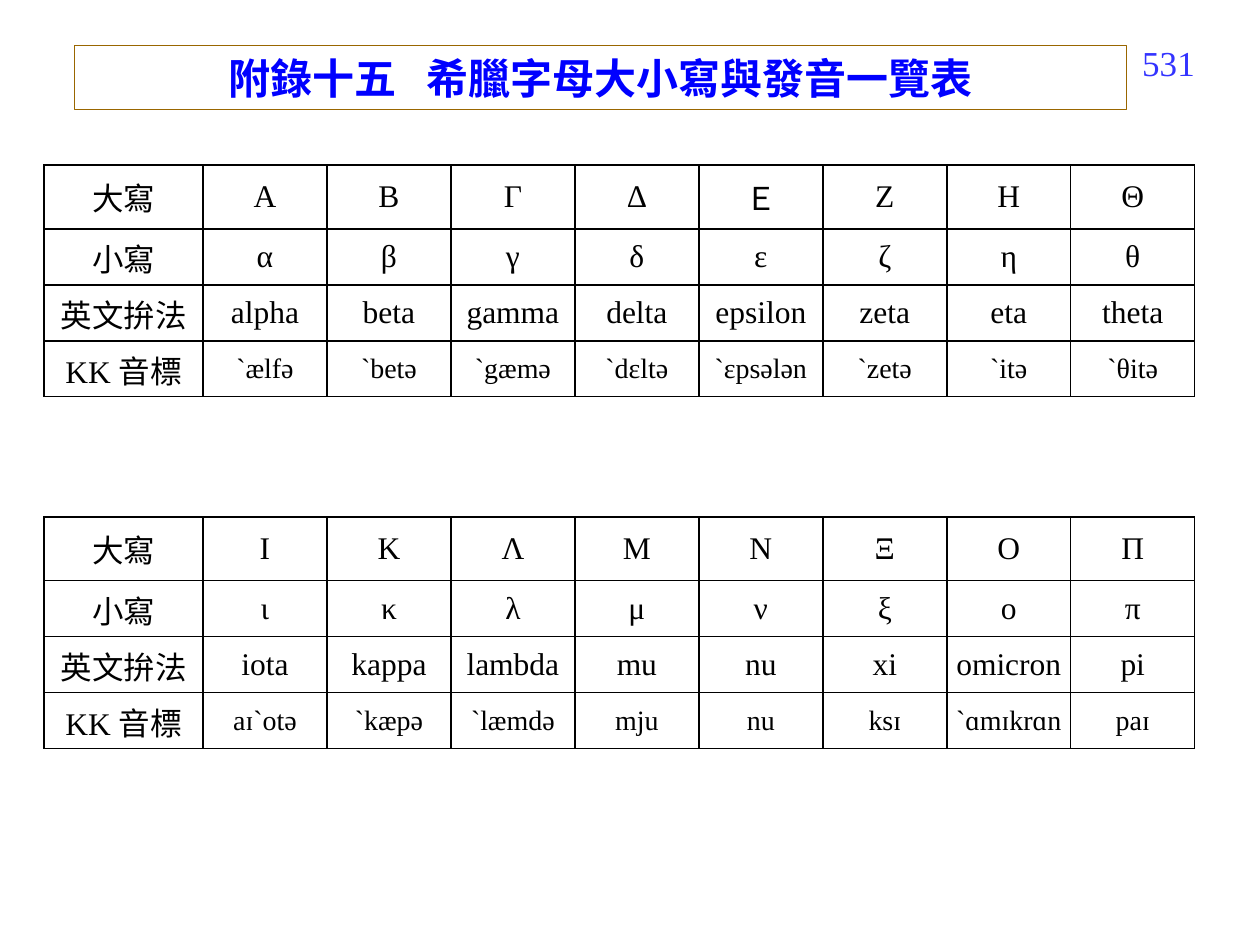
from dataclasses import dataclass

from lxml.etree import SubElement
from pptx import Presentation
from pptx.dml.color import RGBColor
from pptx.enum.shapes import MSO_SHAPE as Shape
from pptx.enum.text import MSO_ANCHOR as Anchor, PP_ALIGN as Align
from pptx.oxml.ns import qn
from pptx.util import Pt


@dataclass(frozen=True)
class Theme:
    font: str = "Times New Roman"
    title_color: str = "0000FF"
    frame_color: str = "996600"
    number_color: str = "3333FF"
    table_color: str = "000000"
    title_size: float = 24
    number_size: float = 20
    letter_size: float = 18
    phonetic_size: float = 16


@dataclass(frozen=True)
class LetterTable:
    top: float
    uppercase: str
    lowercase: str
    spellings: str
    phonetics: str

    def rows(self) -> list[list[str]]:
        columns = (self.uppercase, self.lowercase, self.spellings, self.phonetics)
        return [[label, *values.split()] for label, values in zip(ROW_LABELS, columns)]


THEME = Theme()
ROW_LABELS = ("大寫", "小寫", "英文拚法", "KK 音標")
TABLE_LEFT = 25.2
LABEL_WIDTH, LETTER_WIDTH = 90.8, 70.85
ROW_HEIGHTS = (36.5, 32, 32, 32)
TITLE_GAP = 12

TABLES = (
    LetterTable(
        94.3,
        "Α Β Γ Δ Ｅ Ζ Η Θ",
        "α β γ δ ε ζ η θ",
        "alpha beta gamma delta epsilon zeta eta theta",
        "ˋælfə ˋbetə ˋgæmə ˋdɛltə ˋɛpsələn ˋzetə ˋitə ˋθitə",
    ),
    LetterTable(
        295.3,
        "Ι Κ Λ Μ Ν Ξ Ο Π",
        "ι κ λ μ ν ξ ο π",
        "iota kappa lambda mu nu xi omicron pi",
        "aɪˋotə ˋkæpə ˋlæmdə mju nu ksɪ ˋɑmɪkrɑn paɪ",
    ),
)


def add_run(paragraph, text: str, size: float, color: str, bold: bool = False):
    run = paragraph.add_run()
    run.text = text
    run.font.name = THEME.font
    run.font.size = Pt(size)
    run.font.bold = bold
    run.font.color.rgb = RGBColor.from_string(color)
    return run


def add_page_number(slide, number: str) -> None:
    box = slide.shapes.add_textbox(Pt(626.4), Pt(20.2), Pt(63.4), Pt(37.4))
    box.text_frame.word_wrap = True
    paragraph = box.text_frame.paragraphs[0]
    paragraph.alignment = Align.RIGHT
    add_run(paragraph, number, THEME.number_size, THEME.number_color)


def add_title(slide, heading: str, subject: str) -> None:
    frame = slide.shapes.add_shape(Shape.RECTANGLE, Pt(42.5), Pt(26), Pt(601.2), Pt(36.7))
    frame.shadow.inherit = False
    frame.fill.background()
    frame.line.color.rgb = RGBColor.from_string(THEME.frame_color)
    frame.line.width = Pt(0.75)
    frame.text_frame.word_wrap = True
    frame.text_frame.vertical_anchor = Anchor.MIDDLE
    paragraph = frame.text_frame.paragraphs[0]
    paragraph.alignment = Align.CENTER
    style = (THEME.title_size, THEME.title_color, True)
    add_run(paragraph, heading, *style)
    space = add_run(paragraph, " ", *style)
    space.font._element.set("spc", str(TITLE_GAP * 100))
    add_run(paragraph, subject, *style)


def add_borders(cell) -> None:
    """Draw all four edges; they must precede the fill in the cell properties."""
    properties = cell._tc.get_or_add_tcPr()
    for edge in ("a:lnL", "a:lnR", "a:lnT", "a:lnB"):
        line = SubElement(properties, qn(edge), w=str(Pt(1)))
        fill = SubElement(line, qn("a:solidFill"))
        SubElement(fill, qn("a:srgbClr"), val=THEME.table_color)


def fill_cell(cell, text: str, size: float, is_label: bool) -> None:
    add_borders(cell)
    cell.fill.background()
    cell.vertical_anchor = Anchor.MIDDLE
    if not is_label:
        cell.margin_left = cell.margin_right = Pt(1.5)
    paragraph = cell.text_frame.paragraphs[0]
    paragraph.alignment = Align.CENTER
    add_run(paragraph, text, size, THEME.table_color)


def add_letter_table(slide, letters: LetterTable) -> None:
    rows = letters.rows()
    widths = [LABEL_WIDTH] + [LETTER_WIDTH] * (len(rows[0]) - 1)
    table = slide.shapes.add_table(
        len(rows), len(widths), Pt(TABLE_LEFT), Pt(letters.top),
        Pt(sum(widths)), Pt(sum(ROW_HEIGHTS)),
    ).table
    table.first_row = table.horz_banding = False
    for column, width in zip(table.columns, widths):
        column.width = Pt(width)
    for row_index, (values, height) in enumerate(zip(rows, ROW_HEIGHTS)):
        table.rows[row_index].height = Pt(height)
        is_phonetic = row_index == len(rows) - 1
        for column_index, text in enumerate(values):
            is_label = column_index == 0
            small = is_phonetic and not is_label
            size = THEME.phonetic_size if small else THEME.letter_size
            fill_cell(table.cell(row_index, column_index), text, size, is_label)


def main() -> None:
    presentation = Presentation()
    presentation.slide_width, presentation.slide_height = Pt(720), Pt(540)
    slide = presentation.slides.add_slide(presentation.slide_layouts[6])
    add_page_number(slide, "531")
    add_title(slide, "附錄十五", "希臘字母大小寫與發音一覽表")
    for letters in TABLES:
        add_letter_table(slide, letters)
    presentation.save("out.pptx")


if __name__ == "__main__":
    main()
